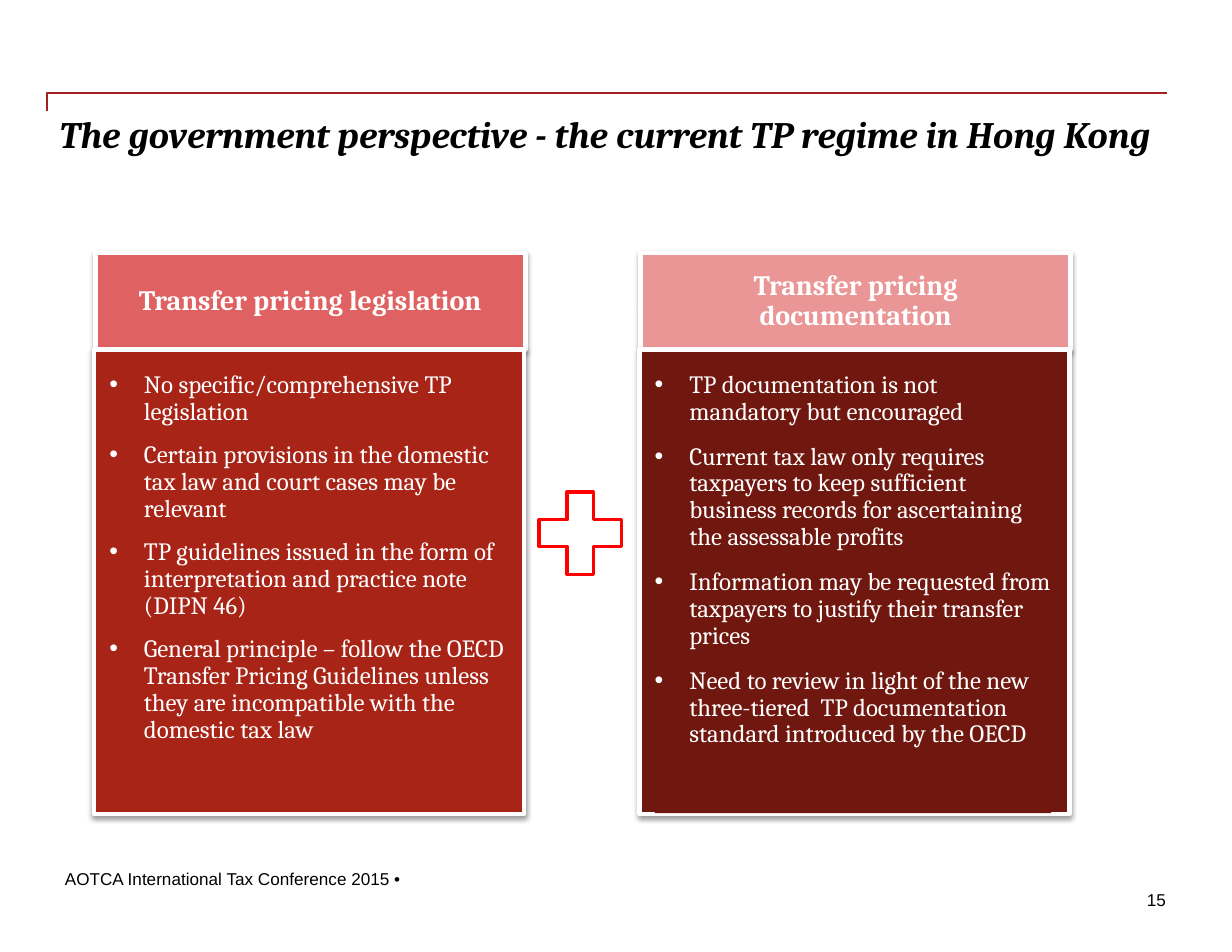
from dataclasses import dataclass
from typing import Optional

from lxml.etree import SubElement
from pptx import Presentation
from pptx.dml.color import RGBColor
from pptx.enum.shapes import MSO_CONNECTOR as Connector, MSO_SHAPE as Preset
from pptx.enum.text import MSO_ANCHOR as Anchor, PP_ALIGN as Align
from pptx.oxml.ns import qn
from pptx.util import Inches, Pt

SLIDE_WIDTH, SLIDE_HEIGHT = 11, 8.5
WHITE, BLACK, RED, RULE_RED = "FFFFFF", "000000", "FF0000", "A32020"

# Panel geometry, in percent of the slide's width (x) and height (y)
PANEL_LEFT, PANEL_STEP, PANEL_WIDTH = 7.64, 44.27, 34.9
HEADER_TOP, BODY_TOP, BODY_BOTTOM = 26.57, 36.74, 85.5
HEADER_SHIFT = 0.09
TEXT_SHIFT, TEXT_TOP, TEXT_WIDTH, TEXT_HEIGHT = 1.23, 39.06, 32.18, 46.35


@dataclass(frozen=True)
class Area:
    """A region in percent of the slide's size."""
    left: float
    top: float
    width: float
    height: float

    def lengths(self) -> tuple:
        return (across(self.left), down(self.top),
                across(self.width), down(self.height))


@dataclass(frozen=True)
class Style:
    size: float
    font: str = "Cambria"
    color: str = WHITE
    bold: bool = False
    italic: bool = False


@dataclass(frozen=True)
class Panel:
    heading: str
    header_fill: str
    body_fill: str
    text_fill: Optional[str]
    gap: float  # points before each bullet after the first
    bullets: tuple


PANELS = (
    Panel("Transfer pricing legislation", "E06161", "A82417", None, 5, (
        "No specific/comprehensive TP legislation",
        "Certain provisions in the domestic tax law and court cases may be relevant",
        "TP guidelines issued in the form of interpretation and practice note (DIPN 46)",
        "General principle – follow the OECD Transfer Pricing Guidelines unless "
        "they are incompatible with the domestic tax law",
    )),
    Panel("Transfer pricing documentation", "EA9696", "70180F", "70180F", 6, (
        "TP documentation is not mandatory but encouraged",
        "Current tax law only requires taxpayers to keep sufficient business "
        "records for ascertaining the assessable profits",
        "Information may be requested from taxpayers to justify their transfer prices",
        "Need to review in light of the new three-tiered  TP documentation "
        "standard introduced by the OECD",
    )),
)


def across(percent: float) -> int:
    return Inches(SLIDE_WIDTH * percent / 100)


def down(percent: float) -> int:
    return Inches(SLIDE_HEIGHT * percent / 100)


def rgb(value: str) -> RGBColor:
    return RGBColor.from_string(value)


def add_run(para, text: str, style: Style) -> None:
    span = para.add_run()
    span.text = text
    font = span.font
    font.name, font.size = style.font, Pt(style.size)
    font.bold, font.italic = style.bold, style.italic
    font.color.rgb = rgb(style.color)


def set_insets(frame, inset: float) -> None:
    frame.margin_left = frame.margin_right = Inches(inset)
    frame.margin_top = frame.margin_bottom = Inches(inset)


def add_label(page, area: Area, text: str, style: Style,
              align=Align.LEFT, wrap: bool = False) -> None:
    frame = page.shapes.add_textbox(*area.lengths()).text_frame
    frame.word_wrap = wrap
    set_insets(frame, 0)
    para = frame.paragraphs[0]
    para.alignment = align
    add_run(para, text, style)


def add_box(page, preset, area: Area, fill: str,
            line: Optional[str] = None, line_width: float = 0):
    box = page.shapes.add_shape(preset, *area.lengths())
    box.shadow.inherit = False
    box.fill.solid()
    box.fill.fore_color.rgb = rgb(fill)
    if line:
        box.line.color.rgb = rgb(line)
        box.line.width = Pt(line_width)
    else:
        box.line.fill.background()
    return box


def add_shadow(box) -> None:
    effects = box._element.spPr.find(qn("a:effectLst"))
    shadow = SubElement(effects, qn("a:outerShdw"), blurRad=str(Pt(3.1)),
                        dist=str(Pt(1.6)), dir="5400000", rotWithShape="0")
    color = SubElement(shadow, qn("a:srgbClr"), val=BLACK)
    SubElement(color, qn("a:alpha"), val="38000")


def add_bullet(para, text: str, before: float) -> None:
    para.alignment = Align.LEFT
    para.line_spacing = 0.9
    para.space_before, para.space_after = Pt(before), Pt(5.6)
    properties = para._p.get_or_add_pPr()
    properties.set("marL", str(Inches(0.31)))
    properties.set("indent", str(Inches(-0.31)))
    SubElement(properties, qn("a:buFont"), typeface="Arial")
    SubElement(properties, qn("a:buChar"), char="•")
    add_run(para, text, Style(16))


def add_panel(page, panel: Panel, left: float) -> None:
    # Heading block
    header = add_box(page, Preset.RECTANGLE,
                     Area(left + HEADER_SHIFT, HEADER_TOP, PANEL_WIDTH, BODY_TOP - HEADER_TOP),
                     panel.header_fill, WHITE, 3)
    add_shadow(header)
    frame = header.text_frame
    frame.word_wrap = True
    frame.vertical_anchor = Anchor.MIDDLE
    set_insets(frame, 0.3)
    para = frame.paragraphs[0]
    para.alignment, para.line_spacing = Align.CENTER, 0.9
    add_run(para, panel.heading, Style(18, bold=True))

    # Body block
    body = add_box(page, Preset.RECTANGLE,
                   Area(left, BODY_TOP, PANEL_WIDTH, BODY_BOTTOM - BODY_TOP),
                   panel.body_fill, WHITE, 3)
    add_shadow(body)

    # Bulleted text on top of the body
    area = Area(left + TEXT_SHIFT, TEXT_TOP, TEXT_WIDTH, TEXT_HEIGHT)
    if panel.text_fill:
        holder = add_box(page, Preset.RECTANGLE, area, panel.text_fill)
    else:
        holder = page.shapes.add_textbox(*area.lengths())
    frame = holder.text_frame
    frame.word_wrap = True
    frame.vertical_anchor = Anchor.TOP
    set_insets(frame, 0)
    for index, text in enumerate(panel.bullets):
        para = frame.add_paragraph() if index else frame.paragraphs[0]
        add_bullet(para, text, panel.gap if index else 6)


def add_title_rule(page) -> None:
    rule = page.shapes.add_connector(Connector.ELBOW, across(3.82), down(11.65),
                                     across(94.73), down(9.76))
    rule.line.color.rgb = rgb(RULE_RED)
    rule.line.width = Pt(1)
    properties = rule._element.spPr
    SubElement(properties, qn("a:effectLst"))
    # Bend at the very start, so the rule rises and then runs right
    adjustments = properties.find(qn("a:prstGeom")).find(qn("a:avLst"))
    SubElement(adjustments, qn("a:gd"), name="adj1", fmla="val 0")


def main() -> None:
    deck = Presentation()
    deck.slide_width, deck.slide_height = Inches(SLIDE_WIDTH), Inches(SLIDE_HEIGHT)
    page = deck.slides.add_slide(deck.slide_layouts[6])

    # Title and footer
    add_title_rule(page)
    add_label(page, Area(4.82, 11.65, 89.45, 11.76),
              "The government perspective - the current TP regime in Hong Kong",
              Style(24, color=BLACK, bold=True, italic=True), wrap=True)
    small = Style(11, "Arial", BLACK)
    add_label(page, Area(5.27, 91.18, 28.09, 2.24),
              "AOTCA International Tax Conference 2015 •", small)
    add_label(page, Area(93.09, 93.41, 1.55, 2.24), "15", small, Align.RIGHT)

    # Two panels joined by a plus sign
    for index, panel in enumerate(PANELS):
        add_panel(page, panel, PANEL_LEFT + index * PANEL_STEP)
    add_box(page, Preset.MATH_PLUS, Area(42.55, 50.12, 9.09, 11.76), WHITE, RED, 2)

    deck.save("out.pptx")


if __name__ == "__main__":
    main()
